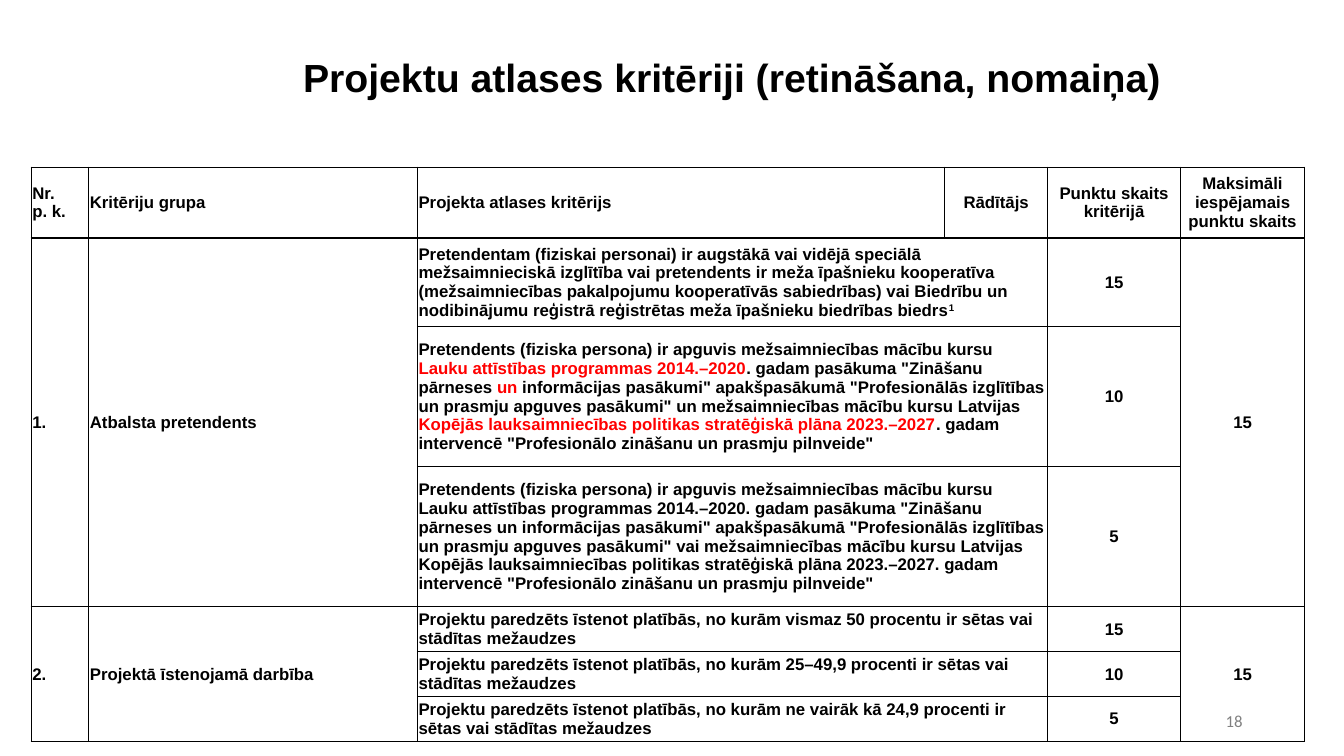
from pptx import Presentation
from pptx.dml.color import RGBColor
from pptx.enum.text import MSO_ANCHOR, PP_ALIGN
from pptx.oxml import parse_xml
from pptx.oxml.ns import nsdecls
from pptx.util import Inches, Pt

BLACK, RED, GREY = "000000", "FF0000", "808080"
LEFT, MID, RIGHT = PP_ALIGN.LEFT, PP_ALIGN.CENTER, PP_ALIGN.RIGHT


def paint(code):
    return RGBColor.from_string(code)


class Deck:
    """Holds the style and the slide; lengths are percent of the slide's size."""

    face = "Arial"
    inset = Inches(0.01)

    def __init__(self, wide, high):
        self.prs = Presentation()
        self.prs.slide_width, self.prs.slide_height = Inches(wide), Inches(high)
        self.slide = self.prs.slides.add_slide(self.prs.slide_layouts[5])

    def across(self, share):
        return round(self.prs.slide_width * share / 100)

    def down(self, share):
        return round(self.prs.slide_height * share / 100)

    def box(self, x, y, w, h):
        return self.across(x), self.down(y), self.across(w), self.down(h)

    def put(self, frame, runs, size, align=LEFT, bold=True, color=BLACK, face=None):
        """Fill a frame with one paragraph; a run is a text or (text, color, raise)."""
        frame.word_wrap = True
        para = frame.paragraphs[0]
        para.alignment = align
        for item in [runs] if isinstance(runs, str) else runs:
            text, tint, lift = (item, color, 0) if isinstance(item, str) else item
            for i, line in enumerate(text.split("\n")):
                if i:
                    para.add_line_break()
                run = para.add_run()
                run.text = line
                font = run.font
                font.name, font.size, font.bold = face or self.face, Pt(size), bold
                font.color.rgb = paint(tint)
                if lift:
                    run._r.get_or_add_rPr().set("baseline", str(lift * 1000))
        return para

    def title(self, text, area):
        head = self.slide.shapes.title
        head.left, head.top, head.width, head.height = self.box(*area)
        head.text_frame.vertical_anchor = MSO_ANCHOR.MIDDLE
        para = self.put(head.text_frame, text, 28)
        para.line_spacing = 0.9

    def label(self, text, area, size, **style):
        frame = self.slide.shapes.add_textbox(*self.box(*area)).text_frame
        frame.vertical_anchor = MSO_ANCHOR.MIDDLE
        self.put(frame, text, size, **style)

    def border(self, cell):
        """Draw a thin black line on each side of a cell and clear its fill."""
        props = cell._tc.get_or_add_tcPr()
        for side in "LRTB":
            props.append(parse_xml(
                f'<a:ln{side} {nsdecls("a")} w="12700"><a:solidFill>'
                f'<a:srgbClr val="{BLACK}"/></a:solidFill></a:ln{side}>'))
        cell.fill.background()

    def table(self, x, y, cols, rows, cells, spans, mids):
        """Build a table; cells maps (row, column) to runs, mids are centred."""
        area = self.box(x, y, sum(cols), sum(rows))
        grid = self.slide.shapes.add_table(len(rows), len(cols), *area).table
        grid.first_row = grid.horz_banding = False
        for col, share in zip(grid.columns, cols):
            col.width = self.across(share)
        for row, share in zip(grid.rows, rows):
            row.height = self.down(share)
        for cell in grid.iter_cells():
            cell.margin_left = cell.margin_right = self.inset
            cell.margin_top = cell.margin_bottom = self.inset
            cell.vertical_anchor = MSO_ANCHOR.MIDDLE
            self.border(cell)
        for (r, c), (tall, wide) in spans.items():
            grid.cell(r, c).merge(grid.cell(r + tall - 1, c + wide - 1))
        for (r, c), runs in cells.items():
            self.put(grid.cell(r, c).text_frame, runs, 12, MID if c in mids else LEFT)


HEADS = ["Nr.\np. k.", "Kritēriju grupa", "Projekta atlases kritērijs", "Rādītājs",
         "Punktu skaits kritērijā", "Maksimāli iespējamais punktu skaits"]

# Each group: number, name, top score, and (criterion, score) pairs
GROUPS = [
    ("1.", "Atbalsta pretendents", "15", [
        (["Pretendentam (fiziskai personai) ir augstākā vai vidējā speciālā "
          "mežsaimnieciskā izglītība vai pretendents ir meža īpašnieku kooperatīva "
          "(mežsaimniecības pakalpojumu kooperatīvās sabiedrības) vai Biedrību un "
          "nodibinājumu reģistrā reģistrētas meža īpašnieku biedrības biedrs",
          ("1", BLACK, 30)], "15"),
        (["Pretendents (fiziska persona) ir apguvis mežsaimniecības mācību kursu ",
          ("Lauku attīstības programmas 2014.–2020", RED, 0),
          '. gadam pasākuma "Zināšanu pārneses ',
          ("un", RED, 0),
          ' informācijas pasākumi" apakšpasākumā "Profesionālās izglītības un prasmju '
          'apguves pasākumi" un mežsaimniecības mācību kursu Latvijas ',
          ("Kopējās lauksaimniecības politikas stratēģiskā plāna 2023.–2027", RED, 0),
          '. gadam intervencē "Profesionālo zināšanu un prasmju pilnveide"'], "10"),
        ("Pretendents (fiziska persona) ir apguvis mežsaimniecības mācību kursu Lauku "
         'attīstības programmas 2014.–2020. gadam pasākuma "Zināšanu pārneses un '
         'informācijas pasākumi" apakšpasākumā "Profesionālās izglītības un prasmju '
         'apguves pasākumi" vai mežsaimniecības mācību kursu Latvijas Kopējās '
         "lauksaimniecības politikas stratēģiskā plāna 2023.–2027. gadam "
         'intervencē "Profesionālo zināšanu un prasmju pilnveide"', "5"),
    ]),
    ("2.", "Projektā īstenojamā darbība", "15", [
        (f"Projektu paredzēts īstenot platībās, no kurām {share} ir sētas vai "
         "stādītas mežaudzes", score)
        for share, score in [("vismaz 50 procentu", "15"), ("25–49,9 procenti", "10"),
                             ("ne vairāk kā 24,9 procenti", "5")]
    ]),
]


def main():
    deck = Deck(13.33, 7.5)
    deck.title("Projektu atlases kritēriji (retināšana, nomaiņa)", (21.8, 1.7, 67.4, 17.6))
    deck.label("18", (70.7, 92.7, 22.5, 5.3), 12, align=RIGHT, bold=False,
               color=GREY, face="Calibri")

    cells = {(0, c): head for c, head in enumerate(HEADS)}
    spans = {}
    row = 1
    for number, name, top, marks in GROUPS:
        for c, text in ((0, number), (1, name), (5, top)):
            cells[row, c] = text
            spans[row, c] = (len(marks), 1)
        for text, score in marks:
            cells[row, 2], cells[row, 4] = text, score
            spans[row, 2] = (1, 2)
            row += 1
    deck.table(2.33, 22.13, [4.28, 24.46, 39.23, 7.65, 9.9, 9.23],
               [9.35, 11.75] + [18.53] * 2 + [5.93] * 3, cells, spans, {3, 4, 5})
    deck.prs.save("out.pptx")


if __name__ == "__main__":
    main()
